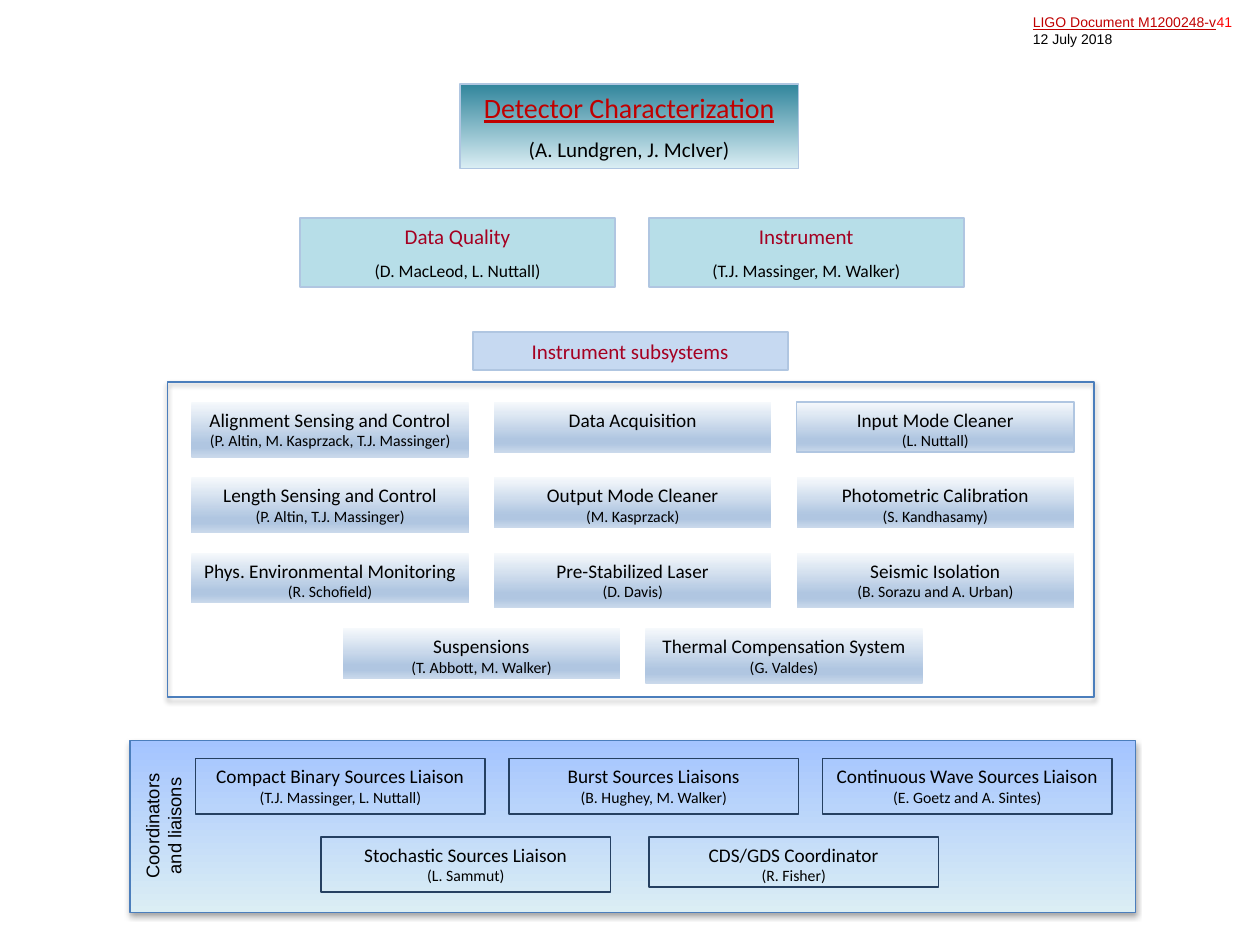
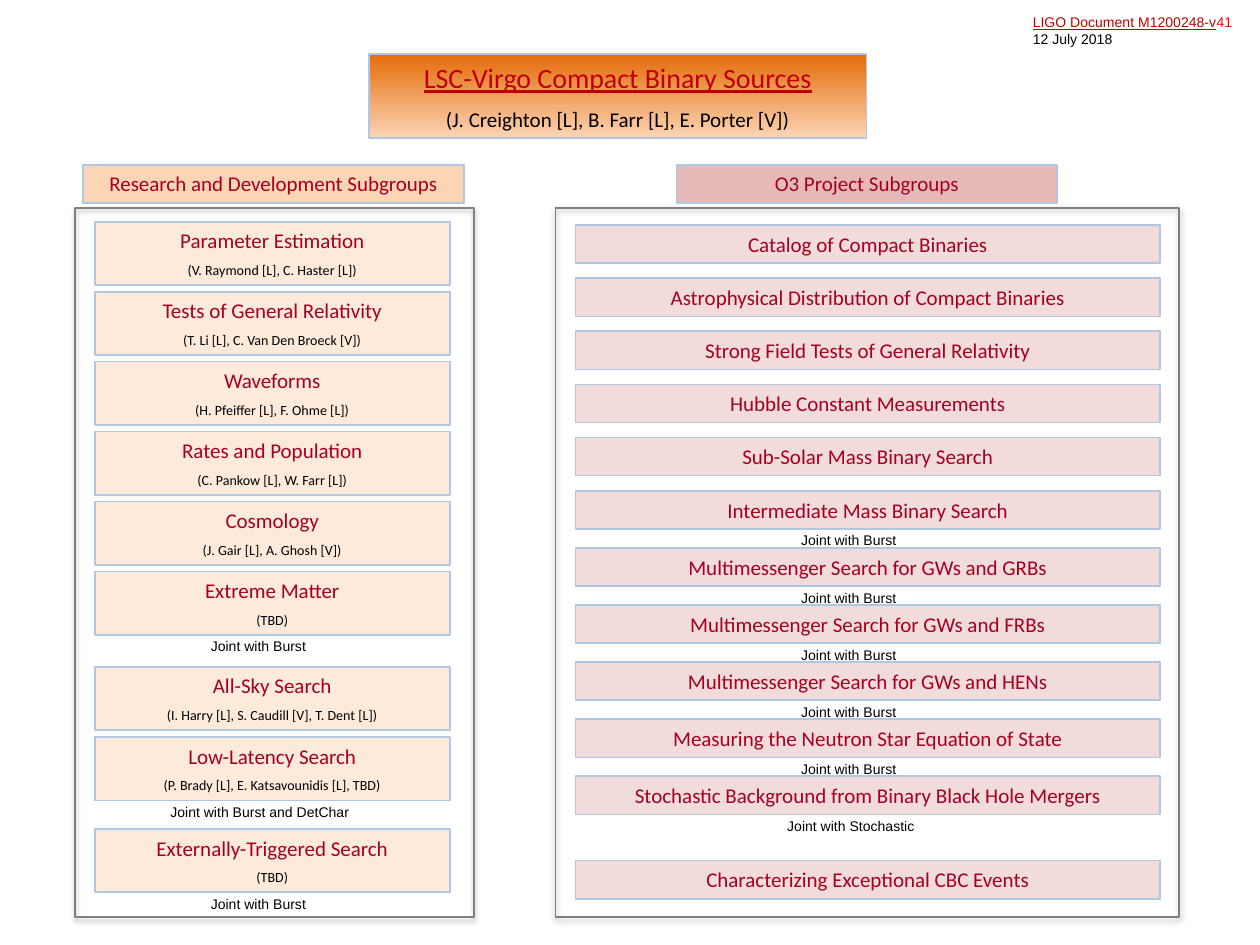
from dataclasses import dataclass

import pptx
import pptx.dml.color
import pptx.enum.shapes
import pptx.enum.text
import pptx.oxml.ns
import pptx.util
from lxml import etree
from pptx.util import Cm

# Shared colours and fonts
BLACK, CRIMSON, RED, WINE = "000000", "C00000", "FF0000", "A50021"
PALE_BLUE, PANEL_BLUE, NAVY, GREY = "B0C6E1", "4B7EBC", "254061", "808080"
BODY_FONT, NOTE_FONT = "Calibri", "Arial"
CENTER = pptx.enum.text.PP_ALIGN.CENTER
LEFT = pptx.enum.text.PP_ALIGN.LEFT


@dataclass(frozen=True)
class Run:
    text: str
    size: float
    colour: str = BLACK
    font: str = BODY_FONT
    underline: bool = False


@dataclass(frozen=True)
class Area:
    """Left, top, width and height in centimetres."""
    x: float
    y: float
    w: float
    h: float


@dataclass(frozen=True)
class Style:
    fill: str | None = None
    stops: tuple[tuple[int, str], ...] = ()
    line: str | None = PALE_BLUE
    width: float = 1
    shadow: bool = False


@dataclass(frozen=True)
class Unit:
    """A named group, its leads and the note under its box."""
    name: str
    leads: str = ""
    note: str = ""
    tall: bool = True
    outlined: bool = False


@dataclass(frozen=True)
class Block:
    """Boxes stacked at an equal pitch."""
    top: float
    pitch: float
    units: tuple[Unit, ...]


@dataclass(frozen=True)
class Column:
    x: float
    w: float
    h: float
    note_centre: float
    style: Style
    blocks: tuple[Block, ...]


# Box styles
PANEL_1 = Style(line=PANEL_BLUE, shadow=True)
PANEL_2 = Style(line=GREY, shadow=True)
LIAISON_PANEL = Style(stops=((0, "A4C4FF"), (100, "DBEEF4")), line=PANEL_BLUE,
                      width=0.75, shadow=True)
SUBSYSTEM_STOPS = ((0, "F6F9FC"), (74, PALE_BLUE), (83, PALE_BLUE), (100, "CAD9EB"))
SUBSYSTEM = Style(stops=SUBSYSTEM_STOPS, line=None)
SUBSYSTEM_OUTLINED = Style(stops=SUBSYSTEM_STOPS)
LIAISON = Style(line=NAVY)
TEAL_TITLE = Style(stops=((0, "31859C"), (100, "DBEEF4")))
ORANGE_TITLE = Style(stops=((0, "E46C0A"), (100, "FCD5B5")))

# Slide 1 content
SUBSYSTEMS = (
    (Unit("Alignment Sensing and Control", "(P. Altin, M. Kasprzack, T.J. Massinger)"),
     Unit("Data Acquisition", tall=False),
     Unit("Input Mode Cleaner", "(L. Nuttall)", tall=False, outlined=True)),
    (Unit("Length Sensing and Control", "(P. Altin, T.J. Massinger)"),
     Unit("Output Mode Cleaner", "(M. Kasprzack)", tall=False),
     Unit("Photometric Calibration", "(S. Kandhasamy)", tall=False)),
    (Unit("Phys. Environmental Monitoring", "(R. Schofield)", tall=False),
     Unit("Pre-Stabilized Laser", "(D. Davis)"),
     Unit("Seismic Isolation", "(B. Sorazu and A. Urban)")),
    (Unit("Suspensions", "(T. Abbott, M. Walker)", tall=False),
     Unit("Thermal Compensation System", "(G. Valdes)")),
)
SOURCE_LIAISONS = (
    Unit("Compact Binary Sources Liaison", "(T.J. Massinger, L. Nuttall)"),
    Unit("Burst Sources Liaisons", "(B. Hughey, M. Walker)"),
    Unit("Continuous Wave Sources Liaison", "(E. Goetz and A. Sintes)"),
)
OTHER_LIAISONS = (
    Unit("Stochastic Sources Liaison", "(L. Sammut)"),
    Unit("CDS/GDS Coordinator", "(R. Fisher)", tall=False),
)

# Slide 2 content
BURST, DETCHAR = "Joint with Burst", "Joint with Burst and DetChar"
STOCHASTIC = "Joint with Stochastic"
NOTE_WIDTHS = {BURST: 2.54, DETCHAR: 4.17, STOCHASTIC: 3.1}
RESEARCH = Column(1.91, 7.16, 1.28, 5.27, Style("FDEADA"), (
    Block(4.47, 1.41, (
        Unit("Parameter Estimation", "(V. Raymond [L], C. Haster [L])"),
        Unit("Tests of General Relativity", "(T. Li [L], C. Van Den Broeck [V])"),
        Unit("Waveforms", "(H. Pfeiffer [L], F. Ohme [L])"),
        Unit("Rates and Population", "(C. Pankow [L], W. Farr [L])"),
        Unit("Cosmology", "(J. Gair [L], A. Ghosh [V])"),
        Unit("Extreme Matter", "(TBD)", BURST))),
    Block(13.44, 1.42, (
        Unit("All-Sky Search", "(I. Harry [L], S. Caudill [V], T. Dent [L])"),
        Unit("Low-Latency Search", "(P. Brady [L], E. Katsavounidis [L], TBD)", DETCHAR))),
    Block(16.71, 1.41, (Unit("Externally-Triggered Search", "(TBD)", BURST),)),
))
PROJECTS = Column(11.6, 11.79, 0.77, 17.17, Style("F2DCDB"), (
    Block(4.54, 1.07, (
        Unit("Catalog of Compact Binaries"),
        Unit("Astrophysical Distribution of Compact Binaries"),
        Unit("Strong Field Tests of General Relativity"),
        Unit("Hubble Constant Measurements"),
        Unit("Sub-Solar Mass Binary Search"))),
    Block(9.9, 1.15, (
        Unit("Intermediate Mass Binary Search", note=BURST),
        Unit("Multimessenger Search for GWs and GRBs", note=BURST),
        Unit("Multimessenger Search for GWs and FRBs", note=BURST),
        Unit("Multimessenger Search for GWs and HENs", note=BURST),
        Unit("Measuring the Neutron Star Equation of State", note=BURST),
        Unit("Stochastic Background from Binary Black Hole Mergers", note=STOCHASTIC))),
    Block(17.35, 1.15, (Unit("Characterizing Exceptional CBC Events"),)),
))


def rgb(value: str) -> pptx.dml.color.RGBColor:
    return pptx.dml.color.RGBColor.from_string(value)


def add_child(parent, tag: str, **attrs):
    values = {k: str(v) for k, v in attrs.items()}
    return etree.SubElement(parent, pptx.oxml.ns.qn(tag), values)


def write(tf, paragraphs, align=CENTER, spaced: bool = False, wrap: bool = True) -> None:
    """Fill a text frame; spaced puts half a line above later paragraphs."""
    frame_format = {"word_wrap": wrap, "auto_size": pptx.enum.text.MSO_AUTO_SIZE.NONE,
                    "vertical_anchor": pptx.enum.text.MSO_ANCHOR.TOP}
    for key, value in frame_format.items():
        setattr(tf, key, value)
    for i, runs in enumerate(paragraphs):
        p = tf.paragraphs[0] if i == 0 else tf.add_paragraph()
        gap = 0.6 * runs[0].size if spaced and i else 0
        for key, value in {"alignment": align, "space_before": pptx.util.Pt(gap)}.items():
            setattr(p, key, value)
        for run in runs:
            r = p.add_run()
            r.text = run.text
            run_format = {"name": run.font, "size": pptx.util.Pt(run.size),
                          "underline": run.underline}
            for key, value in run_format.items():
                setattr(r.font, key, value)
            r.font.color.rgb = rgb(run.colour)


def paint(sp, style: Style) -> None:
    """Set fill, outline and shadow."""
    sp.shadow.inherit = False
    sp_pr = sp._element.spPr
    if style.stops:
        sp.fill.gradient()
        sp.fill.gradient_angle = 270
        stop_list = sp_pr.find(".//" + pptx.oxml.ns.qn("a:gsLst"))
        stop_list[:] = []
        for position, colour in style.stops:
            stop = add_child(stop_list, "a:gs", pos=position * 1000)
            add_child(stop, "a:srgbClr", val=colour)
    elif style.fill:
        sp.fill.solid()
        sp.fill.fore_color.rgb = rgb(style.fill)
    else:
        sp.fill.background()
    if style.line:
        sp.line.color.rgb = rgb(style.line)
        sp.line.width = pptx.util.Pt(style.width)
    else:
        sp.line.fill.background()
    if style.shadow:
        effects = sp_pr.find(pptx.oxml.ns.qn("a:effectLst"))
        outer = add_child(effects, "a:outerShdw", blurRad=pptx.util.Pt(3.1),
                          dist=pptx.util.Pt(1.8), dir=5400000, rotWithShape=0)
        add_child(add_child(outer, "a:srgbClr", val=BLACK), "a:alpha", val=35000)


def place(sp, area: Area) -> None:
    sizes = {"left": area.x, "top": area.y, "width": area.w, "height": area.h}
    for key, value in sizes.items():
        setattr(sp, key, Cm(value))


def add_box(s, area: Area, style: Style, paragraphs=(), spaced: bool = False) -> None:
    sp = s.shapes.add_shape(pptx.enum.shapes.MSO_SHAPE.RECTANGLE, 0, 0, 0, 0)
    place(sp, area)
    paint(sp, style)
    write(sp.text_frame, paragraphs, spaced=spaced)


def add_text(s, area: Area, paragraphs, align=LEFT, wrap: bool = True):
    sp = s.shapes.add_textbox(0, 0, 0, 0)
    place(sp, area)
    write(sp.text_frame, paragraphs, align, wrap=wrap)
    return sp


def unit_lines(unit: Unit, name_size: float, leads_size: float, colour: str = BLACK):
    lines = [[Run(unit.name, name_size, colour)]]
    if unit.leads:
        lines.append([Run(unit.leads, leads_size)])
    return lines


def add_heading(s, area: Area, fill: str, unit: Unit) -> None:
    add_box(s, area, Style(fill), unit_lines(unit, 12, 10, WINE), spaced=True)


def add_row(s, units, x: float, y: float, pitch: float, w: float, style: Style) -> None:
    for i, unit in enumerate(units):
        area = Area(x + i * pitch, y, w, 1.12 if unit.tall else 1.02)
        box_style = SUBSYSTEM_OUTLINED if unit.outlined else style
        add_box(s, area, box_style, unit_lines(unit, 11, 9))


def add_column(s, column: Column) -> None:
    for block in column.blocks:
        for i, unit in enumerate(block.units):
            y = block.top + i * block.pitch
            add_box(s, Area(column.x, y, column.w, column.h), column.style,
                    unit_lines(unit, 12, 8, WINE), spaced=True)
            if unit.note:
                w = NOTE_WIDTHS[unit.note]
                add_text(s, Area(column.note_centre - w / 2, y + column.h - 0.07, w, 0.61),
                         [[Run(unit.note, 8, font=NOTE_FONT)]], wrap=False)


def add_slide(prs, title: str, leads: str, area: Area, style: Style):
    """Start a slide with its title box and the document reference."""
    s = prs.slides.add_slide(prs.slide_layouts[5])
    place(s.shapes.title, area)
    paint(s.shapes.title, style)
    write(s.shapes.title.text_frame,
          [[Run(title, 16, CRIMSON, underline=True)], [Run(leads, 12)]], spaced=True)
    add_text(s, Area(20.57, 0.15, 4.67, 0.94), [
        [Run("LIGO Document M1200248-v", 8, CRIMSON, NOTE_FONT, True),
         Run("41", 8, RED, NOTE_FONT)],
        [Run("12 July 2018", 8, font=NOTE_FONT)]])
    return s


def detector_slide(prs) -> None:
    s = add_slide(prs, "Detector Characterization", "(A. Lundgren, J. McIver)",
                  Area(9.27, 1.7, 6.83, 1.7), TEAL_TITLE)
    add_heading(s, Area(6.05, 4.39, 6.35, 1.4), "B7DEE8",
                Unit("Data Quality", "(D. MacLeod, L. Nuttall)"))
    add_heading(s, Area(13.08, 4.39, 6.35, 1.4), "B7DEE8",
                Unit("Instrument", "(T.J. Massinger, M. Walker)"))
    add_heading(s, Area(9.53, 6.69, 6.35, 0.77), "C6D9F1", Unit("Instrument subsystems"))

    # Subsystem grid, with short rows centred
    add_box(s, Area(3.38, 7.7, 18.67, 6.35), PANEL_1)
    pitch = 6.1
    for i, units in enumerate(SUBSYSTEMS):
        x = 3.86 + (3 - len(units)) * pitch / 2
        add_row(s, units, x, 8.1 + i * 1.52, pitch, 5.59, SUBSYSTEM)

    # Coordinators and liaisons
    add_box(s, Area(2.62, 14.93, 20.27, 3.47), LIAISON_PANEL)
    add_row(s, SOURCE_LIAISONS, 3.94, 15.29, 6.32, 5.84, LIAISON)
    add_row(s, OTHER_LIAISONS, 6.47, 16.87, 6.61, 5.84, LIAISON)
    label = add_text(s, Area(1.55, 16.08, 3.48, 1.14),
                     [[Run(text, 10.5, font=NOTE_FONT)]
                      for text in ("Coordinators", "and liaisons")], CENTER)
    label.rotation = 270


def binary_slide(prs) -> None:
    s = add_slide(prs, "LSC-Virgo Compact Binary Sources",
                  "(J. Creighton [L], B. Farr [L], E. Porter [V])",
                  Area(7.44, 1.09, 10.03, 1.7), ORANGE_TITLE)
    add_heading(s, Area(1.68, 3.32, 7.67, 0.77), "FCD5B5",
                Unit("Research and Development Subgroups"))
    add_heading(s, Area(13.64, 3.32, 7.67, 0.77), "E6B9B8", Unit("O3 Project Subgroups"))
    for x, w, column in ((1.52, 8.03, RESEARCH), (11.2, 12.57, PROJECTS)):
        add_box(s, Area(x, 4.19, w, 14.3), PANEL_2)
        add_column(s, column)


def main() -> None:
    prs = pptx.Presentation()
    prs.slide_width, prs.slide_height = Cm(25.4), Cm(19.05)
    detector_slide(prs)
    binary_slide(prs)
    prs.save("out.pptx")


if __name__ == "__main__":
    main()
